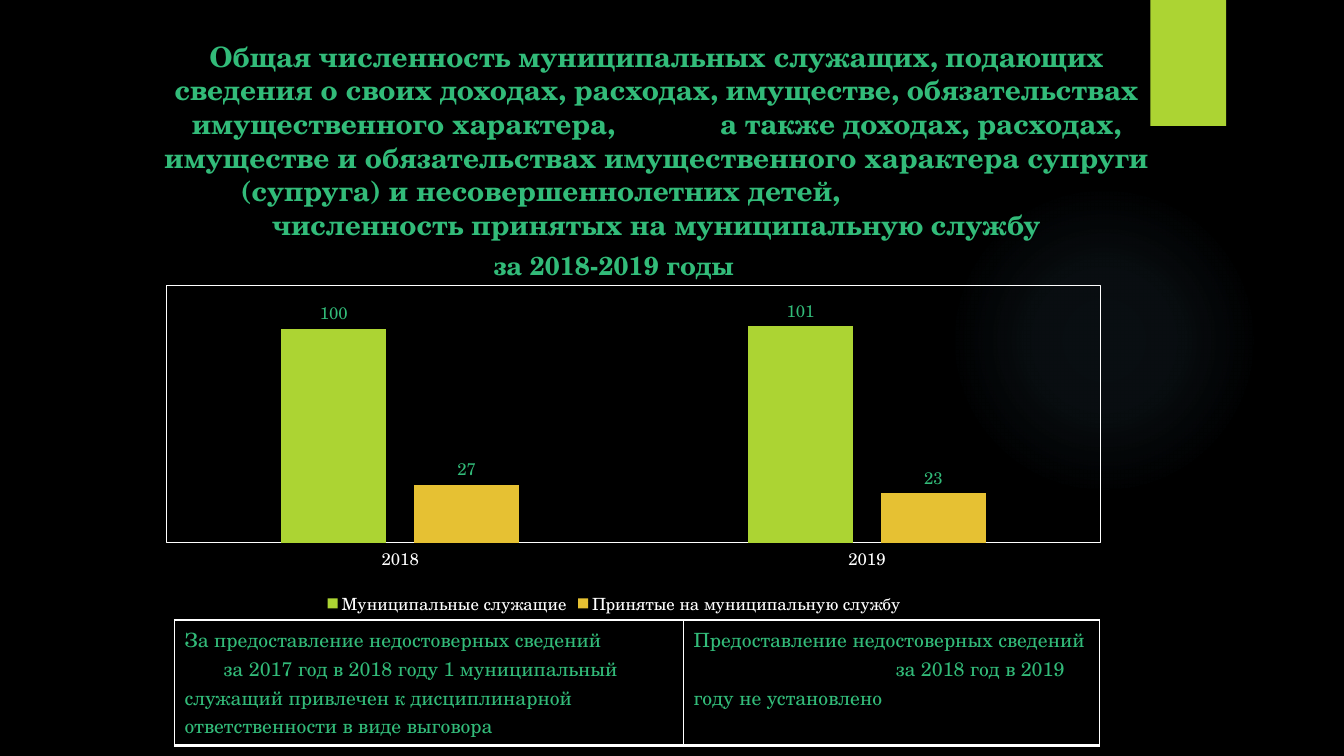
"""Build the slide on municipal employees who declare income, 2018-2019."""
from lxml import etree
from pptx import Presentation
from pptx.chart.data import CategoryChartData
from pptx.dml.color import RGBColor
from pptx.enum import chart as charts, shapes, text
from pptx.oxml import ns, parse_xml
from pptx.util import Pt

FONT = "TeX Gyre Schola"
BLACK, WHITE, GREEN = "000000", "FFFFFF", "32BB79"
LIME, GOLD, GLOW = "ACD433", "E6C133", "7AC4F0"

HEADING = [
    (["Общая численность муниципальных служащих, подающих"], {}),
    (["сведения о своих доходах, расходах, имуществе, обязательствах"], {}),
    (["имущественного характера,", " ", "а также доходах, расходах,"], {"gap": 69}),
    (["имуществе и обязательствах имущественного характера супруги"], {}),
    (["(супруга) и несовершеннолетних детей,"], {"right": 166}),
    (["численность принятых на муниципальную службу"], {}),
]
CHART_TITLE = "за 2018-2019 годы"
YEARS = ["2018", "2019"]
SERIES = [
    ("Муниципальные служащие", [100, 101], LIME),
    ("Принятые на муниципальную службу", [27, 23], GOLD),
]
CELLS = [
    (363.6, [("За предоставление недостоверных сведений", 0),
             ("за 2017 год в 2018 году 1 муниципальный служащий привлечен "
              "к дисциплинарной ответственности в виде выговора", 28)]),
    (297.4, [("Предоставление недостоверных сведений", 0),
             ("за 2018 год в 2019 году не установлено", 144.5)]),
]
BORDERS = [("lnL", 1), ("lnR", 1), ("lnT", 1), ("lnB", 3)]
GLOW_STOPS = [(0, 7), (36, 6), (69, 0), (100, 0)]


def color(value):
    return RGBColor.from_string(value)


def points(*lengths):
    return [Pt(length) for length in lengths]


def style_font(font, size, hue, bold=False):
    font.name, font.size, font.bold = FONT, Pt(size), bold
    font.color.rgb = color(hue)


def write(frame, number, pieces, size=14, bold=False, align=text.PP_ALIGN.LEFT,
          indent=0, right=0, gap=0):
    para = frame.add_paragraph() if number else frame.paragraphs[0]
    props = para._p.get_or_add_pPr()
    for name, value in (("marL", 0), ("marR", right), ("indent", indent)):
        props.set(name, str(int(Pt(value))))
    para.alignment, para.line_spacing = align, 1.0
    para.space_before = para.space_after = Pt(0)
    for piece in pieces:
        span = para.add_run()
        span.text = piece
        style_font(span.font, size, GREEN, bold)
        if piece == " ":
            span._r.get_or_add_rPr().set("spc", str(gap * 100))


def line_xml(tag, width):
    return (f'<a:{tag} {ns.nsdecls("a")} w="{Pt(width)}"><a:solidFill>'
            f'<a:srgbClr val="{WHITE}"/></a:solidFill></a:{tag}>')


def chart_frame(line=""):
    return parse_xml(f'<c:spPr {ns.nsdecls("c", "a")}><a:noFill/>'
                     f'{line or "<a:ln><a:noFill/></a:ln>"}</c:spPr>')


def set_layout(element, index, target="", **numbers):
    for old in element.findall(ns.qn("c:layout")):
        element.remove(old)
    layout = etree.Element(ns.qn("c:layout"))
    manual = etree.SubElement(layout, ns.qn("c:manualLayout"))
    values = {"layoutTarget": target} if target else {}
    values.update(xMode="edge", yMode="edge", **numbers)
    for tag, value in values.items():
        etree.SubElement(manual, ns.qn(f"c:{tag}"), val=str(value))
    element.insert(index, layout)


def add_decor(page):
    glow = page.shapes.add_shape(shapes.MSO_SHAPE.OVAL, *points(677.5, 131.8, 221.8, 221.8))
    tab = page.shapes.add_shape(shapes.MSO_SHAPE.RECTANGLE, *points(821.8, 0, 54, 90))
    for shape in (glow, tab):
        shape.shadow.inherit = False
        shape.line.fill.background()
    tab.fill.solid()
    tab.fill.fore_color.rgb = color(LIME)
    stops = "".join(f'<a:gs pos="{at * 1000}"><a:srgbClr val="{GLOW}"><a:alpha '
                    f'val="{alpha * 1000}"/></a:srgbClr></a:gs>' for at, alpha in GLOW_STOPS)
    gradient = parse_xml(
        f'<a:gradFill {ns.nsdecls("a")}><a:gsLst>{stops}</a:gsLst><a:path path="circle">'
        '<a:fillToRect l="50000" t="50000" r="50000" b="50000"/></a:path></a:gradFill>')
    glow._element.spPr.find(ns.qn("a:prstGeom")).addnext(gradient)


def add_heading(page):
    box = page.shapes.title
    box.left, box.top, box.width, box.height = points(98.6, 24.5, 741, 154.8)
    frame = box.text_frame
    frame.word_wrap, frame.auto_size = True, text.MSO_AUTO_SIZE.NONE
    frame.vertical_anchor = text.MSO_ANCHOR.TOP
    for number, (pieces, options) in enumerate(HEADING):
        write(frame, number, pieces, size=20, bold=True,
              align=text.PP_ALIGN.CENTER, **options)


def add_columns(page):
    data = CategoryChartData()
    data.categories = YEARS
    for name, values, _ in SERIES:
        data.add_series(name, values)
    chart = page.shapes.add_chart(charts.XL_CHART_TYPE.COLUMN_CLUSTERED,
                                  *points(86.8, 161.7, 704.2, 280.8), data).chart
    style_font(chart.font, 12, WHITE)
    chart.has_title = True
    para = chart.chart_title.text_frame.paragraphs[0]
    para.text = CHART_TITLE
    style_font(para.runs[0].font, 18.6, GREEN, True)
    chart.has_legend = True
    chart.legend.position = charts.XL_LEGEND_POSITION.BOTTOM
    chart.legend.include_in_layout = False
    style_font(chart.legend.font, 12, WHITE)
    years, scale = chart.category_axis, chart.value_axis
    years.major_tick_mark = charts.XL_TICK_MARK.NONE
    years.format.line.color.rgb = color(WHITE)
    years.format.line.width = Pt(0.75)
    style_font(years.tick_labels.font, 12, WHITE)
    scale.visible = scale.has_major_gridlines = False
    scale.minimum_scale, scale.maximum_scale = 0, 120
    plot = chart.plots[0]
    plot.gap_width, plot.overlap, plot.vary_by_categories = 219, -27, False
    for series, (_, _, hue) in zip(plot.series, SERIES):
        series.format.fill.solid()
        series.format.fill.fore_color.rgb = color(hue)
        labels = series.data_labels
        labels.show_value = True
        labels.position = charts.XL_LABEL_POSITION.OUTSIDE_END
        style_font(labels.font, 12, GREEN)
    body = chart._chartSpace.find(ns.qn("c:chart"))
    area = body.find(ns.qn("c:plotArea"))
    set_layout(area, 0, "inner", x=0.046, y=0.151, w=0.947, h=0.654)
    set_layout(body.find(ns.qn("c:title")), 1, x=0.373, y=0.028)
    area.append(chart_frame(line_xml("ln", 0.75)))
    body.addnext(chart_frame())


def add_notes_table(page):
    table = page.shapes.add_table(1, len(CELLS), *points(124.6, 442.8, 661, 89)).table
    table.first_row = table.horz_banding = False
    for column, (width, lines) in enumerate(CELLS):
        table.columns[column].width = Pt(width)
        cell = table.cell(0, column)
        cell.fill.background()
        for number, (content, indent) in enumerate(lines):
            write(cell.text_frame, number, [content], indent=indent)
        for index, (tag, weight) in enumerate(BORDERS):
            cell._tc.get_or_add_tcPr().insert(index, parse_xml(line_xml(tag, weight)))


def main():
    deck = Presentation()
    deck.slide_width, deck.slide_height = points(960, 540)
    page = deck.slides.add_slide(deck.slide_layouts[5])
    page.background.fill.solid()
    page.background.fill.fore_color.rgb = color(BLACK)
    add_decor(page)
    add_heading(page)
    add_columns(page)
    add_notes_table(page)
    deck.save("out.pptx")


if __name__ == "__main__":
    main()
